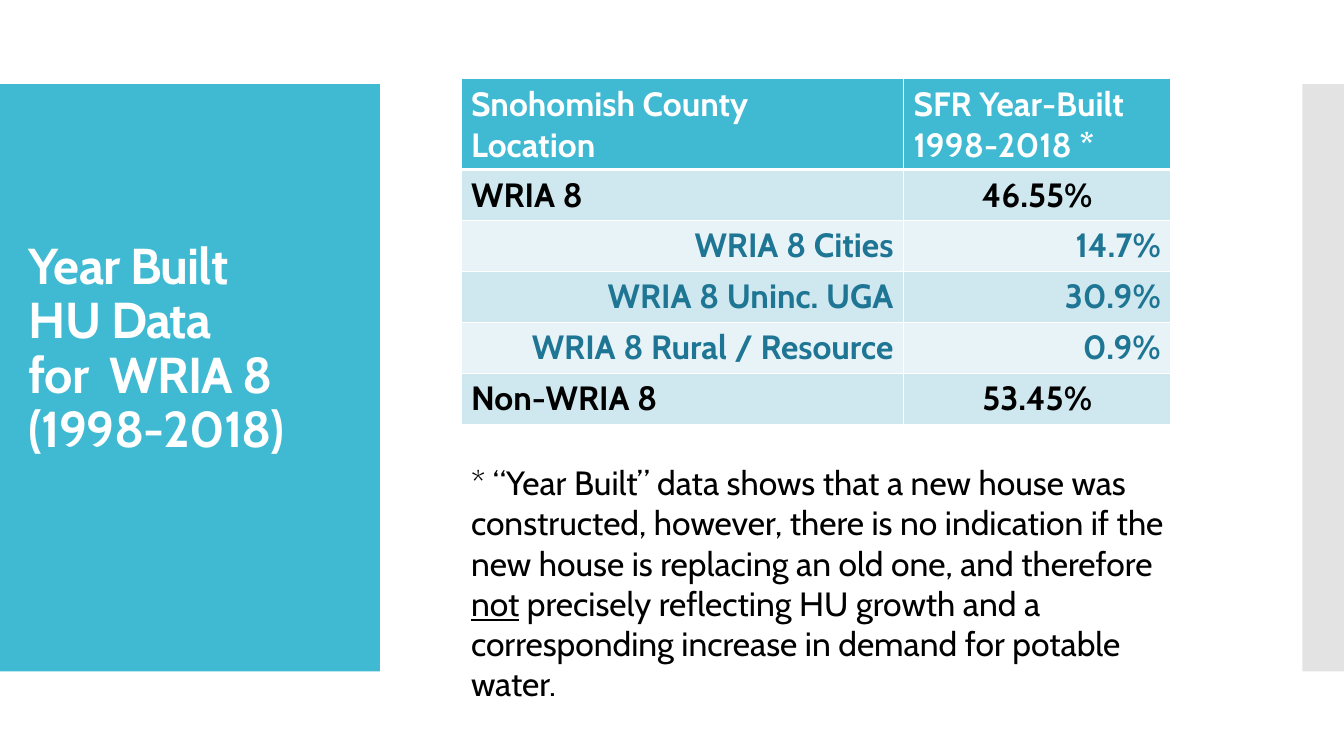
from lxml import etree
from pptx import Presentation
from pptx.dml.color import RGBColor
from pptx.enum.shapes import MSO_SHAPE
from pptx.enum.text import MSO_ANCHOR, PP_ALIGN
from pptx.oxml.ns import qn
from pptx.util import Pt

RECT = MSO_SHAPE.RECTANGLE
MIDDLE = MSO_ANCHOR.MIDDLE
LEFT, CENTER, RIGHT = PP_ALIGN.LEFT, PP_ALIGN.CENTER, PP_ALIGN.RIGHT
FONT = "Cabin"
TEAL, DEEP_TEAL = "40BAD2", "1E7594"
BANDS = ("CFE7EE", "E8F3F7")
WHITE, BLACK, GRAY = "FFFFFF", "000000", "C8C8C8"
HEADER = ("Snohomish County\nLocation", "SFR Year-Built\n1998-2018 *")
ROWS = [
    ("WRIA 8", "46.55%", True),
    ("WRIA 8 Cities", "14.7%", False),
    ("WRIA 8 Uninc. UGA", "30.9%", False),
    ("WRIA 8 Rural / Resource", "0.9%", False),
    ("Non-WRIA 8", "53.45%", True),
]


def rgb(color):
    return RGBColor.from_string(color)


def add_run(p, text, size, color, bold=False, underline=False):
    r = p.add_run()
    r.text = text
    r.font.name, r.font.size = FONT, Pt(size)
    r.font.color.rgb = rgb(color)
    r.font.bold, r.font.underline = bold, underline
    return r


def add_panel(s, x, y, w, h, color, alpha=None):
    sp = s.shapes.add_shape(RECT, Pt(x), Pt(y), Pt(w), Pt(h))
    sp.shadow.inherit = False
    sp.fill.solid()
    sp.fill.fore_color.rgb = rgb(color)
    sp.line.fill.background()
    if alpha:
        fill = sp._element.spPr.find(qn("a:solidFill"))
        etree.SubElement(fill[0], qn("a:alpha"), val=str(alpha * 1000))


def add_text_box(s, x, y, w, h):
    tf = s.shapes.add_textbox(Pt(x), Pt(y), Pt(w), Pt(h)).text_frame
    tf.word_wrap = True
    return tf


def add_title(s, x, y, w, h):
    tf = add_text_box(s, x, y, w, h)
    tf.vertical_anchor = MIDDLE
    tf.margin_bottom = Pt(43)
    p = tf.paragraphs[0]
    p.line_spacing = 0.9
    for i, line in enumerate(("Year Built", "HU Data", "for  WRIA 8", "(1998-2018)")):
        if i:
            p.add_line_break()
        r = add_run(p, line, 36, WHITE, bold=True)
        r._r.get_or_add_rPr().set("spc", "-60")


def set_borders(cell, top, bottom):
    tcPr = cell._tc.get_or_add_tcPr()
    for side, width in (("L", 1), ("R", 1), ("T", top), ("B", bottom)):
        ln = etree.SubElement(tcPr, qn("a:ln" + side), w=str(Pt(width)))
        fill = etree.SubElement(ln, qn("a:solidFill"))
        etree.SubElement(fill, qn("a:srgbClr"), val=WHITE)


def fill_cell(cell, text, color, back, align, top=1, bottom=1):
    set_borders(cell, top, bottom)
    cell.fill.solid()
    cell.fill.fore_color.rgb = rgb(back)
    for i, line in enumerate(text.split("\n")):
        p = cell.text_frame.add_paragraph() if i else cell.text_frame.paragraphs[0]
        p.alignment = align
        add_run(p, line, 24, color, bold=True)


def add_share_table(s, x, y, widths, header_h, row_h):
    height = header_h + row_h * len(ROWS)
    table = s.shapes.add_table(len(ROWS) + 1, len(widths), Pt(x), Pt(y),
                               Pt(sum(widths)), Pt(height)).table
    for col, width in zip(table.columns, widths):
        col.width = Pt(width)
    for i, row in enumerate(table.rows):
        row.height = Pt(row_h if i else header_h)
    for j, text in enumerate(HEADER):
        fill_cell(table.cell(0, j), text, WHITE, TEAL, LEFT, bottom=3)
    for i, (place, share, main_row) in enumerate(ROWS):
        color = BLACK if main_row else DEEP_TEAL
        aligns = (LEFT, CENTER) if main_row else (RIGHT, RIGHT)
        for j, text in enumerate((place, share)):
            fill_cell(table.cell(i + 1, j), text, color, BANDS[i % 2], aligns[j],
                      top=1 if i else 3)


def add_footnote(s, x, y, w, h):
    p = add_text_box(s, x, y, w, h).paragraphs[0]
    add_run(p, "* “Year Built” data shows that a new house was constructed, however, "
               "there is no indication if the new house is replacing an old one, "
               "and therefore ", 24, BLACK)
    add_run(p, "not", 24, BLACK, underline=True)
    add_run(p, " precisely reflecting HU growth and a corresponding increase in "
               "demand for potable water.", 24, BLACK)


def main():
    prs = Presentation()
    prs.slide_width, prs.slide_height = Pt(960), Pt(540)
    s = prs.slides.add_slide(prs.slide_layouts[6])
    add_panel(s, 0, 60, 271.3, 419.5, TEAL)
    add_panel(s, 930.3, 60, 29.7, 419.5, GRAY, alpha=50)
    add_title(s, 13.5, 88.5, 245.5, 362)
    add_share_table(s, 329.4, 56.3, (316, 191), 64.8, 36.4)
    add_footnote(s, 329.4, 326.3, 540, 152.6)
    prs.save("out.pptx")


if __name__ == "__main__":
    main()
